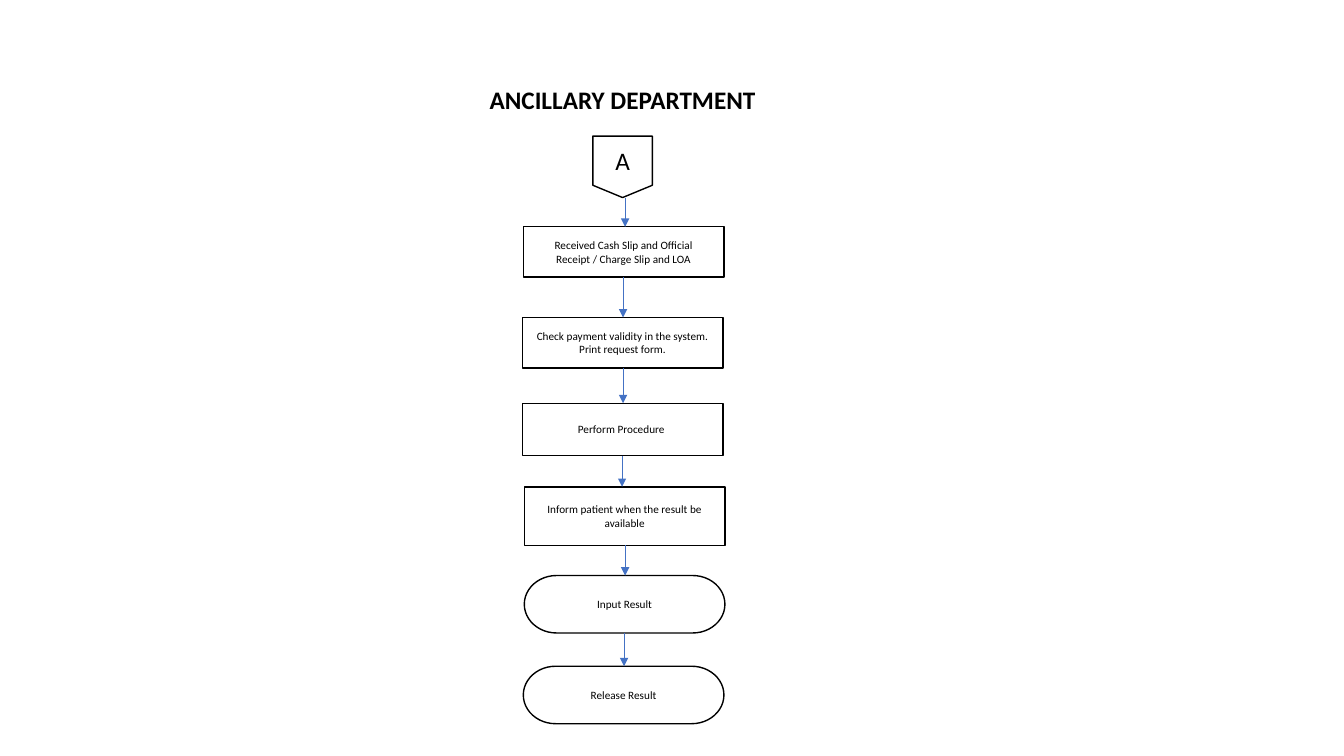
from dataclasses import dataclass

import pptx
import pptx.dml.color
import pptx.enum.shapes
import pptx.enum.text
import pptx.oxml
import pptx.oxml.ns
import pptx.util
from lxml import etree

SHAPES = pptx.enum.shapes.MSO_SHAPE
PX = 9144  # one px is a hundredth of an inch
BLACK, WHITE, BLUE = "000000", "FFFFFF", "4472C4"


@dataclass
class Step:
    text: str
    kind: int
    left: int
    top: int
    height: int
    arrow_x: int = 0  # where the arrow from the previous step comes in
    width: int = 199
    size: int = 8
    fill: str = WHITE

    @property
    def bottom(self) -> int:
        return self.top + self.height


STEPS = [
    Step("A", SHAPES.FLOWCHART_OFFPAGE_CONNECTOR, 588, 135, 61, width=59, size=18, fill=""),
    Step("Received Cash Slip and Official Receipt / Charge Slip and LOA",
         SHAPES.FLOWCHART_PROCESS, 519, 225, 50, 620),
    Step("Check payment validity in the system. Print request form.",
         SHAPES.FLOWCHART_PROCESS, 518, 315, 50, 618),
    Step("Perform Procedure ", SHAPES.FLOWCHART_PROCESS, 518, 400, 52, 618),
    Step("Inform patient when the result be available",
         SHAPES.FLOWCHART_PROCESS, 520, 483, 58, 617),
    Step("Input Result", SHAPES.FLOWCHART_TERMINATOR, 520, 571, 57, 620),
    Step("Release Result", SHAPES.FLOWCHART_TERMINATOR, 519, 661, 57, 619),
]


def px(length: int) -> pptx.util.Emu:
    return pptx.util.Emu(length * PX)


def color(value: str) -> pptx.dml.color.RGBColor:
    return pptx.dml.color.RGBColor.from_string(value)


def write(frame: pptx.text.text.TextFrame, text: str, size: int, bold: bool = False) -> None:
    frame.text = text
    frame.word_wrap = True
    frame.auto_size = pptx.enum.text.MSO_AUTO_SIZE.NONE
    frame.vertical_anchor = pptx.enum.text.MSO_ANCHOR.MIDDLE
    paragraph = frame.paragraphs[0]
    paragraph.alignment = pptx.enum.text.PP_ALIGN.CENTER
    font = paragraph.runs[0].font
    font.name, font.size, font.bold = "Calibri", pptx.util.Pt(size), bold
    font.color.rgb = color(BLACK)


def draw_step(slide: pptx.slide.Slide, step: Step) -> None:
    box = slide.shapes.add_shape(
        step.kind, px(step.left), px(step.top), px(step.width), px(step.height))
    box.shadow.inherit = False
    if step.fill:
        box.fill.solid()
        box.fill.fore_color.rgb = color(step.fill)
    else:
        box.fill.background()
    box.line.color.rgb = color(BLACK)
    box.line.width = pptx.util.Pt(1)
    write(box.text_frame, step.text, step.size)


def draw_arrow(slide: pptx.slide.Slide, x: int, top: int, bottom: int) -> None:
    arrow = slide.shapes.add_connector(
        pptx.enum.shapes.MSO_CONNECTOR.STRAIGHT, px(x), px(top), px(x), px(bottom))
    arrow.line.color.rgb = color(BLUE)
    arrow.line.width = pptx.util.Pt(0.75)
    qn = pptx.oxml.ns.qn
    properties = arrow.line._get_or_add_ln().getparent()
    etree.SubElement(properties.find(qn("a:ln")), qn("a:tailEnd"), type="triangle")
    etree.SubElement(properties, qn("a:effectLst"))


def main() -> None:
    deck = pptx.Presentation()
    deck.slide_width, deck.slide_height = px(1333), px(750)
    slide = deck.slides.add_slide(deck.slide_layouts.get_by_name("Title Only"))

    # Heading
    heading = slide.shapes.title
    heading.left, heading.top, heading.width, heading.height = px(106), px(79), px(1023), px(40)
    write(heading.text_frame, "ANCILLARY DEPARTMENT", 18, bold=True)

    # Steps from top to bottom
    for step in STEPS:
        draw_step(slide, step)

    # Arrows between neighbouring steps
    for previous, following in zip(STEPS, STEPS[1:]):
        draw_arrow(slide, following.arrow_x, previous.bottom, following.top)

    deck.save("out.pptx")


if __name__ == "__main__":
    main()
